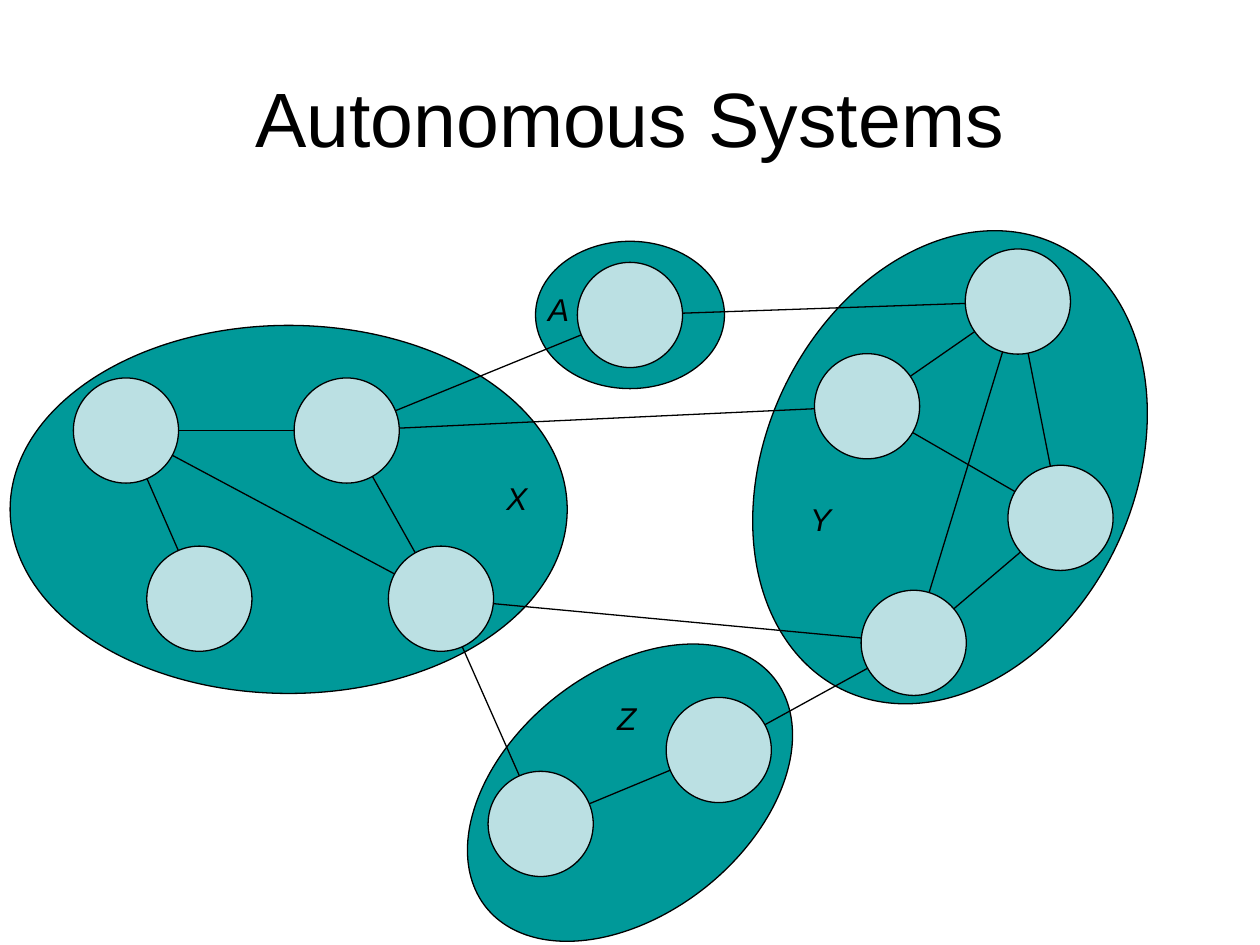
from dataclasses import dataclass

from lxml import etree
from pptx import Presentation
from pptx import util as u
from pptx.dml import color as c
from pptx.enum import shapes, text
from pptx.oxml import ns


@dataclass(frozen=True)
class Theme:
    font: str = "Arial"
    ink: c.RGBColor = c.RGBColor.from_string("000000")
    area: c.RGBColor = c.RGBColor.from_string("009999")
    router: c.RGBColor = c.RGBColor.from_string("BBE0E3")
    title_size: int = 44
    label_size: int = 18
    line_width: float = 0.75


def write_text(tf, content, *, size, italic=False, align=text.PP_ALIGN.LEFT,
               anchor=text.MSO_ANCHOR.TOP, wrap=False,
               auto_size=text.MSO_AUTO_SIZE.SHAPE_TO_FIT_TEXT):
    tf.word_wrap = wrap
    tf.auto_size = auto_size
    tf.vertical_anchor = anchor
    p = tf.paragraphs[0]
    p.alignment = align
    r = p.add_run()
    r.text = content
    r.font.name = theme.font
    r.font.size = u.Pt(size)
    r.font.italic = italic
    r.font.color.rgb = theme.ink


def add_ellipse(x, y, width, height, fill, rotation=0):
    sp = s.shapes.add_shape(shapes.MSO_SHAPE.OVAL, u.Cm(x - width / 2),
                            u.Cm(y - height / 2), u.Cm(width), u.Cm(height))
    sp.rotation = rotation
    sp.shadow.inherit = False
    sp.fill.solid()
    sp.fill.fore_color.rgb = fill
    sp.line.color.rgb = theme.ink
    sp.line.width = u.Pt(theme.line_width)


theme = Theme()
router_size = 2.12

areas = [
    (19.15, 9.42, 9.96, 7.42, 115.6),
    (5.82, 10.27, 11.23, 7.42, 0),
    (12.7, 6.35, 2.97, 3.81, 90),
    (12.7, 15.98, 4.88, 7.42, 51.5),
]
routers = {
    "X1": (2.54, 8.68),
    "X2": (6.99, 8.68),
    "X3": (8.89, 12.07),
    "X4": (4.02, 12.07),
    "A1": (12.7, 6.35),
    "Y1": (20.52, 6.08),
    "Y2": (17.48, 8.19),
    "Y3": (21.38, 10.44),
    "Y4": (18.42, 12.96),
    "Z1": (14.49, 15.12),
    "Z2": (10.9, 16.61),
}
links = [
    ("X2", "A1"), ("Y1", "A1"), ("X2", "Y2"),
    ("X3", "Z2"), ("X3", "Y4"), ("Z1", "Y4"),
    ("X1", "X4"), ("X1", "X2"), ("X1", "X3"), ("X2", "X3"),
    ("Y1", "Y2"), ("Y1", "Y3"), ("Y1", "Y4"), ("Y2", "Y3"), ("Y3", "Y4"),
    ("Z1", "Z2"),
]
labels = {
    "Y": (16.08, 9.96),
    "X": (9.96, 9.53),
    "Z": (12.19, 13.97),
    "A": (10.8, 5.72),
}

prs = Presentation()
prs.slide_width, prs.slide_height = u.Cm(25.4), u.Cm(19.05)
s = prs.slides.add_slide(prs.slide_layouts[5])

title = s.shapes.title
title.left, title.top = u.Cm(1.27), u.Cm(0.76)
title.width, title.height = u.Cm(22.86), u.Cm(3.18)
write_text(title.text_frame, "Autonomous Systems", size=theme.title_size,
           align=text.PP_ALIGN.CENTER, anchor=text.MSO_ANCHOR.MIDDLE,
           wrap=True, auto_size=text.MSO_AUTO_SIZE.NONE)

for x, y, width, height, rotation in areas:
    add_ellipse(x, y, width, height, theme.area, rotation)

for start, end in links:
    ends = [u.Cm(v) for v in routers[start] + routers[end]]
    link = s.shapes.add_connector(shapes.MSO_CONNECTOR.STRAIGHT, *ends)
    link.line.color.rgb = theme.ink
    link.line.width = u.Pt(theme.line_width)
    etree.SubElement(link._element.spPr, ns.qn("a:effectLst"))

for x, y in routers.values():
    add_ellipse(x, y, router_size, router_size, theme.router)

for name, (left, top) in labels.items():
    box = s.shapes.add_textbox(u.Cm(left), u.Cm(top), u.Cm(1), u.Cm(1.27))
    write_text(box.text_frame, name, size=theme.label_size, italic=True)

prs.save("out.pptx")
